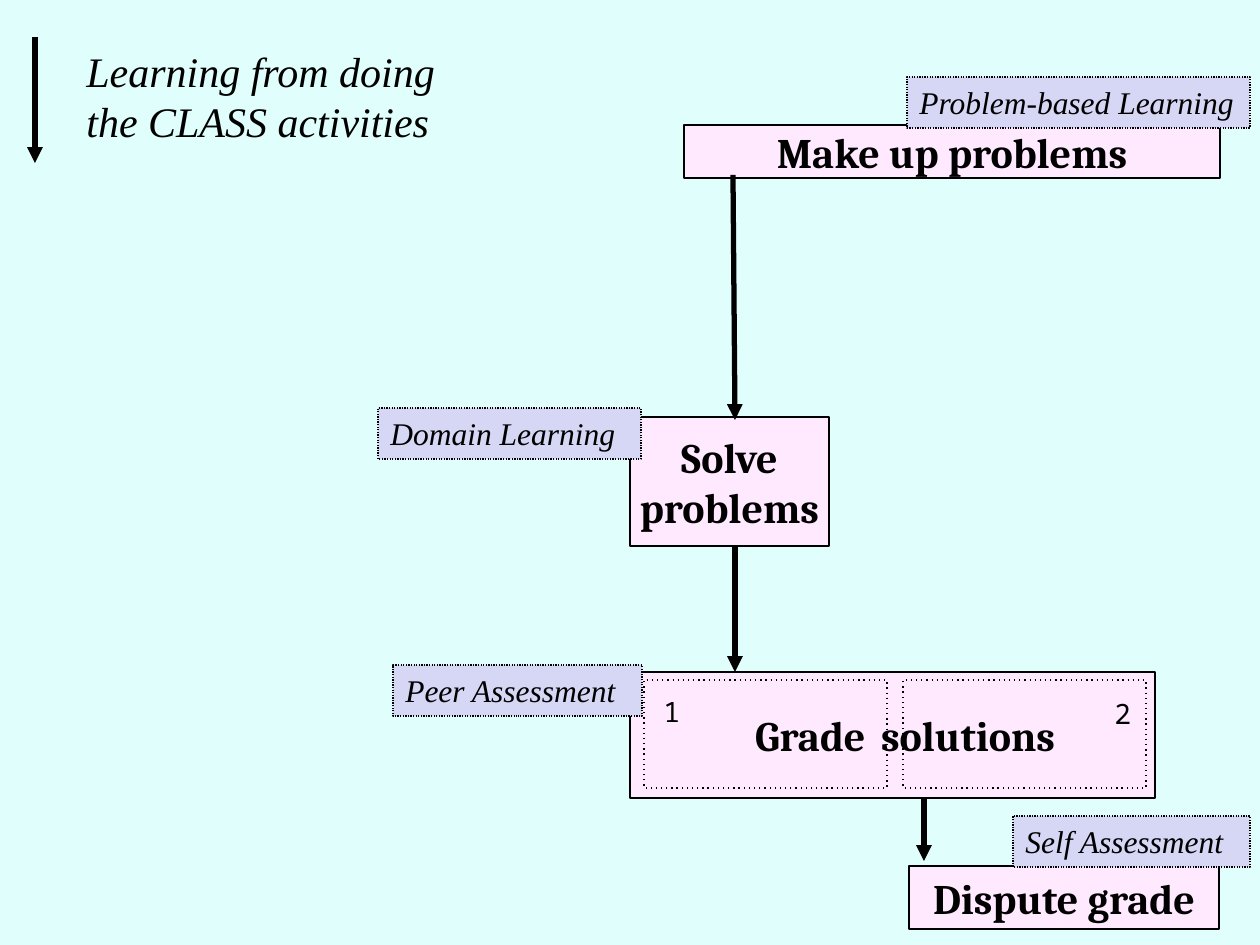
from dataclasses import dataclass

from pptx import Presentation
from pptx.dml.color import RGBColor
from pptx.enum.shapes import MSO_CONNECTOR as Connector, MSO_SHAPE as Shape
from pptx.enum.text import MSO_ANCHOR as Anchor, PP_ALIGN as Align
from pptx.oxml.ns import qn
from pptx.util import Pt
from lxml.etree import SubElement

PX = 914400 / 126


def emu(*lengths):
    return [round(length * PX) for length in lengths]


@dataclass(frozen=True)
class Theme:
    background: str = "E0FFFC"
    step: str = "FFE9FF"
    tag: str = "D6D6F5"
    ink: str = "000000"
    step_font: str = "Cambria"
    number_font: str = "Noto Sans Mono"
    note_font: str = "Times New Roman"
    large: int = 24
    medium: int = 18
    small: int = 16
    outline: float = 0.75
    arrow: float = 3


class Diagram:
    def __init__(self, slide, theme):
        self.slide = slide
        self.theme = theme
        background = slide.background.fill
        background.solid()
        background.fore_color.rgb = RGBColor.from_string(theme.background)

    def set_text(self, box, text, font, size, align=Align.LEFT, anchor=Anchor.TOP,
                 wrap=True, bold=False, italic=False):
        frame = box.text_frame
        frame.text = text
        frame.word_wrap = wrap
        frame.vertical_anchor = anchor
        for para in frame.paragraphs:
            para.alignment = align
            for span in para.runs:
                span.font.name = font
                span.font.size = Pt(size)
                span.font.bold = bold
                span.font.italic = italic
                span.font.color.rgb = RGBColor.from_string(self.theme.ink)

    def rectangle(self, place, fill=None, dash=None):
        box = self.slide.shapes.add_shape(Shape.RECTANGLE, *emu(*place))
        box.shadow.inherit = False
        if fill:
            box.fill.solid()
            box.fill.fore_color.rgb = RGBColor.from_string(fill)
        else:
            box.fill.background()
        box.line.color.rgb = RGBColor.from_string(self.theme.ink)
        box.line.width = Pt(self.theme.outline)
        if dash:
            SubElement(box.line._get_or_add_ln(), qn("a:prstDash"), val=dash)
        return box

    def step(self, text, *place):
        box = self.rectangle(place, self.theme.step)
        self.set_text(box, text, self.theme.step_font, self.theme.large,
                      Align.CENTER, Anchor.MIDDLE, wrap=False, bold=True)

    def split_step(self, text, indent, tab, *place):
        """Draw a step whose two words stand at the indent and at a tab stop."""
        box = self.rectangle(place, self.theme.step)
        frame = box.text_frame
        frame.margin_left, tab_position = emu(indent, tab)
        properties = frame.paragraphs[0]._p.get_or_add_pPr()
        stops = SubElement(properties, qn("a:tabLst"))
        SubElement(stops, qn("a:tab"), pos=str(tab_position), algn="l")
        self.set_text(box, text, self.theme.step_font, self.theme.large,
                      anchor=Anchor.MIDDLE, bold=True)

    def tag(self, text, *place):
        box = self.rectangle(place, self.theme.tag, "sysDot")
        self.set_text(box, text, self.theme.note_font, self.theme.medium, italic=True)

    def phase(self, *place):
        self.rectangle(place, dash="dot")

    def label(self, text, font, size, place, italic=False):
        box = self.slide.shapes.add_textbox(*emu(*place))
        self.set_text(box, text, font, size, italic=italic)

    def number(self, text, *place):
        self.label(text, self.theme.number_font, self.theme.small, place)

    def caption(self, text, *place):
        self.label(text, self.theme.note_font, self.theme.large, place, italic=True)

    def arrow(self, *ends):
        connector = self.slide.shapes.add_connector(Connector.STRAIGHT, *emu(*ends))
        connector.line.color.rgb = RGBColor.from_string(self.theme.ink)
        connector.line.width = Pt(self.theme.arrow)
        SubElement(connector.line._get_or_add_ln(), qn("a:tailEnd"), type="triangle")
        SubElement(connector._element.spPr, qn("a:effectLst"))


def main():
    deck = Presentation()
    deck.slide_width, deck.slide_height = emu(1260, 945)
    diagram = Diagram(deck.slides.add_slide(deck.slide_layouts[6]), Theme())

    diagram.step("Make up problems", 684, 125, 536, 53)
    diagram.step("Solve\nproblems", 630, 417, 199, 129)
    diagram.arrow(924, 798, 924, 861)
    diagram.arrow(735, 546, 735, 672)
    diagram.arrow(733, 175, 735, 420)

    diagram.split_step("Grade\tsolutions", 125, 148, 630, 672, 525, 126)
    for left in (644, 903):
        diagram.phase(left, 680, 243, 108)
    diagram.number("1", 651, 688, 44, 47)
    diagram.number("2", 1102, 690, 44, 47)

    diagram.arrow(35, 37, 35, 163)
    diagram.caption("Learning from doing the CLASS activities", 74, 39, 375, 115)

    diagram.step("Dispute grade", 909, 866, 310, 63)
    for text, left, top, width in (
        ("Problem-based Learning", 907, 77, 343),
        ("Domain Learning", 378, 408, 263),
        ("Peer Assessment", 393, 665, 249),
        ("Self Assessment", 1013, 816, 237),
    ):
        diagram.tag(text, left, top, width, 51)

    deck.save("out.pptx")


if __name__ == "__main__":
    main()
